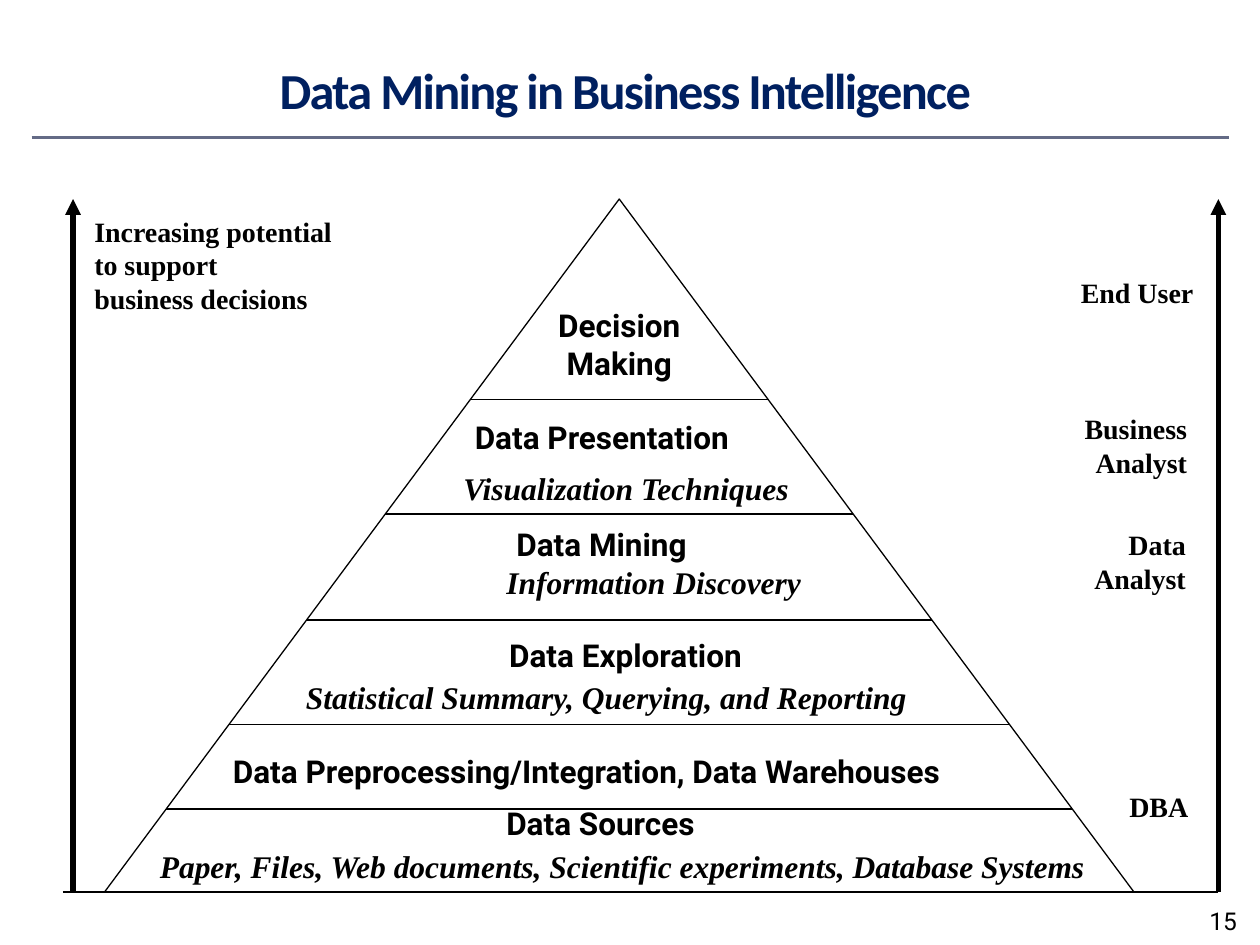
import pptx
import pptx.dml.color
import pptx.enum.shapes
import pptx.enum.text
import pptx.oxml.xmlchemy
import pptx.util
from pptx.util import Inches

SANS, SERIF = "Roboto", "Times New Roman"
LEFT, CENTER, RIGHT = (pptx.enum.text.PP_ALIGN.LEFT,
                       pptx.enum.text.PP_ALIGN.CENTER,
                       pptx.enum.text.PP_ALIGN.RIGHT)


def color(value):
    """Turn a hex string into a colour."""
    return pptx.dml.color.RGBColor.from_string(value)


def add_text(s, box, lines, size, font, bold=True, italic=False, align=LEFT,
             wrap=False, fill="000000"):
    """Add a text box with one paragraph for each line."""
    sp = s.shapes.add_textbox(*map(Inches, box))
    tf = sp.text_frame
    tf.word_wrap = wrap
    tf.auto_size = pptx.enum.text.MSO_AUTO_SIZE.SHAPE_TO_FIT_TEXT
    for i, line in enumerate(lines):
        p = tf.paragraphs[0] if i == 0 else tf.add_paragraph()
        p.text = line
        p.alignment = align
        p.font.size = pptx.util.Pt(size)
        p.font.name = font
        p.font.bold = bold
        p.font.italic = italic
        p.font.color.rgb = color(fill)
    return sp


def add_line(s, x1, y1, x2, y2, width=0.75, fill="000000", arrow=False):
    """Add a straight line, with an arrowhead at its end if asked."""
    sp = s.shapes.add_connector(pptx.enum.shapes.MSO_CONNECTOR.STRAIGHT,
                                *map(Inches, (x1, y1, x2, y2)))
    sp.line.width = pptx.util.Pt(width)
    sp.line.color.rgb = color(fill)
    if arrow:
        head = pptx.oxml.xmlchemy.OxmlElement("a:tailEnd")
        head.set("type", "triangle")
        sp.line._get_or_add_ln().append(head)
    sp._element.spPr.append(pptx.oxml.xmlchemy.OxmlElement("a:effectLst"))


def add_header(s, x, y, w, h):
    """Place the title and the rule under it."""
    add_line(s, x, y + h, x + w, y + h, 1.5, "646B86")
    sp = add_text(s, (x, y, w, 0.58), ["Data Mining in Business Intelligence "],
                  28.8, "Calibri", align=CENTER, wrap=True, fill="002060")
    tf = sp.text_frame
    tf.auto_size = pptx.enum.text.MSO_AUTO_SIZE.NONE
    tf.vertical_anchor = pptx.enum.text.MSO_ANCHOR.MIDDLE
    for r in tf.paragraphs[0].runs:
        r._r.get_or_add_rPr().set("spc", "-100")


def add_pyramid(s, x, y, w, h):
    """Place the triangle, its dividers and the labels of its levels."""
    sp = s.shapes.add_shape(pptx.enum.shapes.MSO_SHAPE.FLOWCHART_EXTRACT,
                            *map(Inches, (x, y, w, h)))
    sp.shadow.inherit = False
    sp.fill.background()
    sp.line.color.rgb = color("000000")
    sp.line.width = pptx.util.Pt(0.75)
    middle = x + w / 2
    for depth in (1.59, 2.5, 3.34, 4.17, 4.84):
        half = w / 2 * depth / h
        add_line(s, middle - half, y + depth, middle + half, y + depth)

    topics = [
        (3.42, 0.8, 1.33, "Decision Making", CENTER, True),
        (2.84, 1.69, 2.47, "Data Presentation", LEFT, False),
        (3.17, 2.54, 1.95, "Data Mining", LEFT, True),
        (2.85, 3.42, 2.57, "Data Exploration", CENTER, True),
        (0.92, 4.34, 6.59, "Data Preprocessing/Integration, Data Warehouses",
         LEFT, False),
        (3.09, 4.75, 1.86, "Data Sources", LEFT, False),
    ]
    for dx, dy, width, text, align, wrap in topics:
        height = 0.7 if text == "Decision Making" else 0.4
        add_text(s, (x + dx, y + dy, width, height), [text], 18, SANS,
                 align=align, wrap=wrap)

    details = [
        (2.75, 2.09, 2.82, "Visualization Techniques", False),
        (3.09, 2.84, 2.54, "Information Discovery", False),
        (1.5, 3.75, 5, "Statistical Summary, Querying, and Reporting", True),
        (0.34, 5.09, 7.78, "Paper, Files, Web documents, Scientific "
         "experiments, Database Systems", True),
    ]
    for dx, dy, width, text, wrap in details:
        add_text(s, (x + dx, y + dy, width, 0.4), [text], 18, SERIF,
                 italic=True, wrap=wrap)


def add_axes(s, x, y, w, h):
    """Place the side arrows, the base line and the labels beside them."""
    for axis in (x, x + w):
        add_line(s, axis, y + h, axis, y, 3, arrow=True)
    add_line(s, x - 0.08, y + h, x + w, y + h)
    add_text(s, (x + 0.07, y + 0.07, 2.1, 0.9),
             ["Increasing potential", "to support", "business decisions"],
             16, SERIF)
    roles = [
        (7.89, 0.56, 1.1, ["End User"]),
        (7.9, 1.64, 1.04, ["Business", "Analyst"]),
        (7.99, 2.56, 0.94, ["Data", "Analyst"]),
        (8.28, 4.64, 0.67, ["DBA"]),
    ]
    for dx, dy, width, lines in roles:
        add_text(s, (x + dx, y + dy, width, 0.1 + 0.27 * len(lines)), lines,
                 16, SERIF, align=RIGHT)


def main():
    """Build the slide and save it."""
    prs = pptx.Presentation()
    prs.slide_width, prs.slide_height = Inches(10), Inches(7.5)
    s = prs.slides.add_slide(prs.slide_layouts[6])
    add_header(s, 0.25, 0.42, 9.5, 0.67)
    add_pyramid(s, 0.83, 1.58, 8.17, 5.5)
    add_axes(s, 0.58, 1.58, 9.09, 5.5)
    add_text(s, (9.5, 7.14, 0.5, 0.36), ["15"], 14, SANS, bold=False, wrap=True)
    prs.save("out.pptx")


if __name__ == "__main__":
    main()
